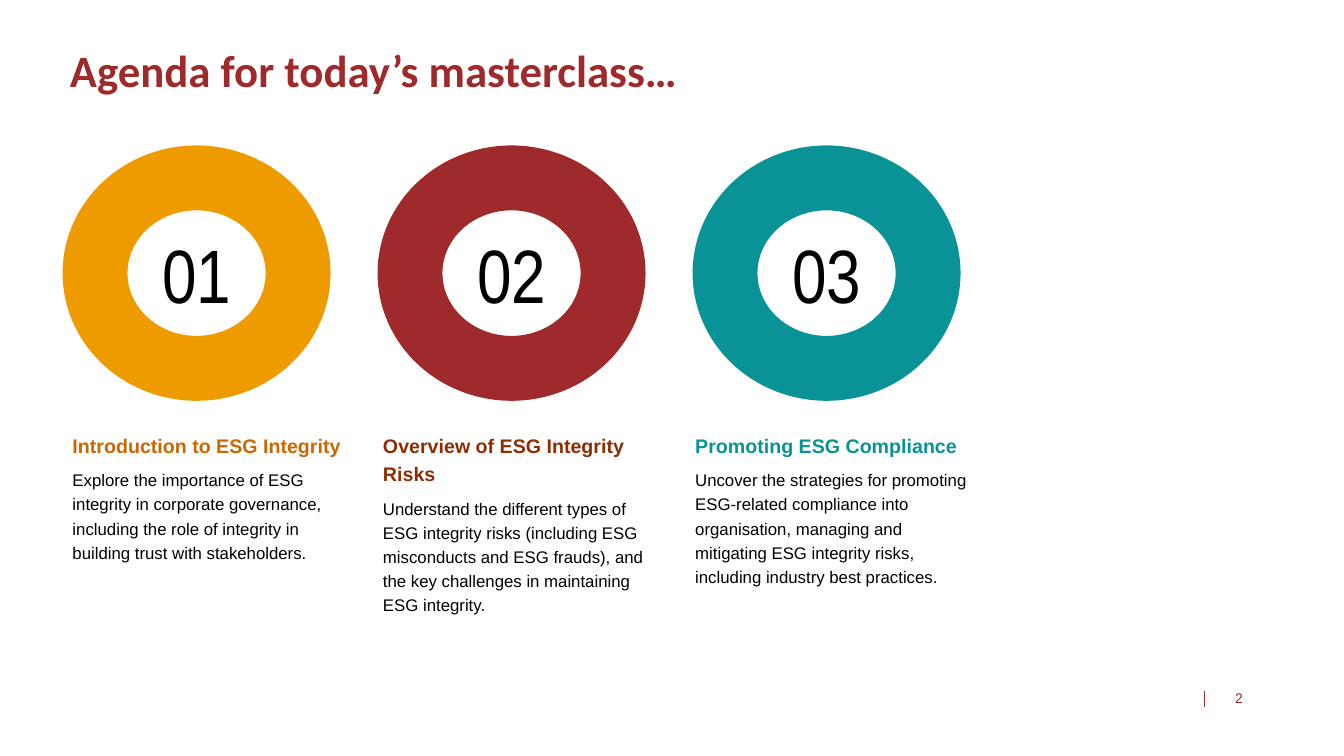
from pptx import Presentation
from pptx.dml.color import RGBColor
from pptx.enum import shapes, text
from pptx.oxml.ns import qn
from pptx.util import Pt
from lxml import etree

COLORS = {"red": "9E2A2B", "amber": "EE9B00", "teal": "0A9396",
          "orange": "CA6702", "rust": "8C2E02", "black": "000000"}

TITLE = "Agenda for today’s masterclass…"
PAGE = "2"

# number, ring colour, heading colour, text left, heading, description
AGENDA = [
    ("01", "amber", "orange", 51.8, "Introduction to ESG Integrity",
     "Explore the importance of ESG integrity in corporate governance, "
     "including the role of integrity in building trust with stakeholders."),
    ("02", "red", "rust", 273.6, "Overview of ESG Integrity Risks",
     "Understand the different types of ESG integrity risks (including ESG "
     "misconducts and ESG frauds), and the key challenges in maintaining "
     "ESG integrity."),
    ("03", "teal", "teal", 496.6, "Promoting ESG Compliance",
     "Uncover the strategies for promoting ESG-related compliance into "
     "organisation, managing and mitigating ESG integrity risks, including "
     "industry best practices."),
]

# Ring row geometry
RING_LEFT, RING_TOP, RING_W, RING_H, PITCH = 45.2, 104.4, 190.4, 181.4, 225
NUM_W, NUM_H = 75, 46
TEXT_TOP, TEXT_W, TEXT_H = 306.7, 201.2, 135


def rgb(name):
    return RGBColor.from_string(COLORS[name])


def add_text(s, box, paras, anchor=text.MSO_ANCHOR.TOP,
             align=text.PP_ALIGN.LEFT, spacing=1.0, after=0):
    """Each paragraph is (words, font, size, colour, bold)."""
    tf = s.shapes.add_textbox(*map(Pt, box)).text_frame
    tf.word_wrap = True
    tf.vertical_anchor = anchor
    tf.margin_left = tf.margin_right = tf.margin_top = tf.margin_bottom = 0
    for i, (words, font, size, color, bold) in enumerate(paras):
        p = tf.add_paragraph() if i else tf.paragraphs[0]
        p.text = words
        p.alignment, p.line_spacing, p.space_after = align, spacing, Pt(after)
        p.font.name, p.font.size, p.font.bold = font, Pt(size), bold
        p.font.color.rgb = rgb(color)


prs = Presentation()
prs.slide_width, prs.slide_height = Pt(960), Pt(540)
s = prs.slides.add_slide(prs.slide_layouts[6])

# Page number and its rule
add_text(s, (861.8, 493.2, 26, 11.6), [(PAGE, "Arial", 10, "red", False)],
         text.MSO_ANCHOR.BOTTOM, text.PP_ALIGN.RIGHT)
rule = s.shapes.add_connector(shapes.MSO_CONNECTOR.STRAIGHT,
                              Pt(860.4), Pt(493.4), Pt(860.4), Pt(505.2))
rule.line.color.rgb = rgb("red")
rule.line.width = Pt(0.5)
etree.SubElement(rule.element.spPr, qn("a:effectLst"))

# Title
add_text(s, (50, 33.8, 664.6, 41.8), [(TITLE, "Calibri", 32, "red", True)],
         text.MSO_ANCHOR.MIDDLE, spacing=0.7)

# Agenda columns
for i, (num, ring, head, left, heading, body) in enumerate(AGENDA):
    add_text(s, (left, TEXT_TOP, TEXT_W, TEXT_H),
             [(heading, "Arial", 14, head, True),
              (body, "Arial", 12, "black", False)], spacing=1.2, after=6)

    x = RING_LEFT + i * PITCH
    add_text(s, (x + (RING_W - NUM_W) / 2, RING_TOP + (RING_H - NUM_H) / 2 + 8,
                 NUM_W, NUM_H),
             [(num, "Arial Narrow", 54, "black", False)],
             text.MSO_ANCHOR.MIDDLE, text.PP_ALIGN.CENTER, 0.7)
    sp = s.shapes.add_shape(shapes.MSO_SHAPE.DONUT, Pt(x), Pt(RING_TOP),
                            Pt(RING_W), Pt(RING_H))
    sp.shadow.inherit = False
    sp.fill.solid()
    sp.fill.fore_color.rgb = sp.line.color.rgb = rgb(ring)
    sp.line.width = Pt(1)

prs.save("out.pptx")
